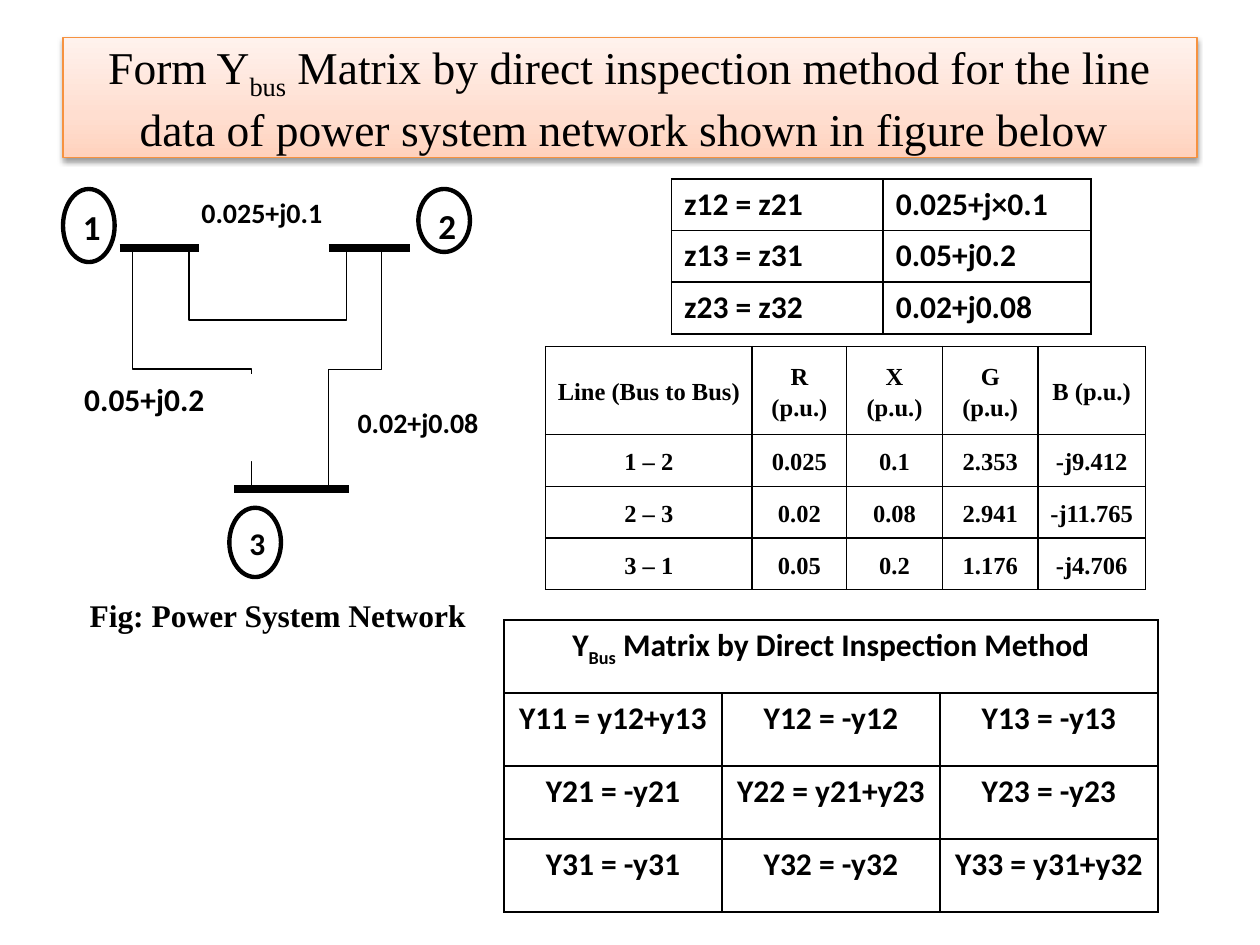
from copy import deepcopy

from lxml import etree
from pptx import Presentation
from pptx.dml.color import RGBColor
from pptx.enum.shapes import MSO_CONNECTOR as LINE, MSO_SHAPE as SHAPE
from pptx.enum.text import MSO_ANCHOR as ANCHOR, PP_ALIGN as ALIGN
from pptx.oxml import parse_xml
from pptx.oxml.ns import nsdecls, qn
from pptx.util import Inches, Pt

COLORS = {"ink": "000000", "paper": "FFFFFF", "title_line": "F69240"}
TITLE_STOPS = [(0, "FFD2BD"), (0.35, "FFDED0"), (1, "FFF2ED")]
SERIF = "Times New Roman"

IMPEDANCES = [
    ["z12 = z21", "0.025+j×0.1"],
    ["z13 = z31", "0.05+j0.2"],
    ["z23 = z32", "0.02+j0.08"],
]
LINE_DATA = [
    ["Line (Bus to Bus)", "R (p.u.)", "X (p.u.)", "G (p.u.)", "B (p.u.)"],
    ["1 – 2", "0.025", "0.1", "2.353", "-j9.412"],
    ["2 – 3", "0.02", "0.08", "2.941", "-j11.765"],
    ["3 – 1", "0.05", "0.2", "1.176", "-j4.706"],
]
Y_BUS = [
    ["Y~Bus~ Matrix by Direct Inspection Method", "", ""],
    ["Y11 = y12+y13", "Y12 = -y12", "Y13 = -y13"],
    ["Y21 = -y21", "Y22 = y21+y23", "Y23 = -y23"],
    ["Y31 = -y31", "Y32 = -y32", "Y33 = y31+y32"],
]


def color(name):
    return RGBColor.from_string(COLORS[name])


def write(tf, text, size=18, font="Calibri", bold=True, align=ALIGN.LEFT,
          after=None, spacing=None):
    """Fill a text frame; text between tildes becomes subscript."""
    tf.word_wrap = True
    p = tf.paragraphs[0]
    p.alignment = align
    if after is not None:
        p.space_after = Pt(after)
    if spacing is not None:
        p.line_spacing = spacing
    for i, part in enumerate(text.split("~")):
        r = p.add_run()
        r.text = part
        r.font.size, r.font.name, r.font.bold = Pt(size), font, bold
        r.font.color.rgb = color("ink")
        if i % 2:
            r._r.get_or_add_rPr().set("baseline", "-25000")


def add_box(s, kind, box, text, line=None, **fmt):
    sp = s.shapes.add_shape(kind, *map(Inches, box))
    sp.shadow.inherit = False
    sp.fill.solid()
    sp.fill.fore_color.rgb = color("paper")
    if line:
        sp.line.color.rgb = color("ink")
        sp.line.width = Pt(line)
    else:
        sp.line.fill.background()
    sp.text_frame.vertical_anchor = ANCHOR.TOP
    write(sp.text_frame, text, after=10, **fmt)


def add_title(s, text):
    sp = s.shapes.add_shape(SHAPE.RECTANGLE, *map(Inches, (0.5, 0.3, 9, 0.95)))
    sp.line.color.rgb = color("title_line")
    sp.line.width = Pt(0.75)
    sp.fill.gradient()
    sp.fill.gradient_angle = 90
    stops = sp._element.spPr.find(qn("a:gradFill")).find(qn("a:gsLst"))
    stops.append(deepcopy(stops[0]))
    for stop, (position, rgb) in zip(sp.fill.gradient_stops, TITLE_STOPS):
        stop.position = position
        stop.color.rgb = RGBColor.from_string(rgb)
    sp._element.spPr.append(parse_xml(
        f'<a:effectLst {nsdecls("a")}><a:outerShdw blurRad="{Pt(3.1)}" '
        f'dist="{Pt(1.6)}" dir="5400000" rotWithShape="0"><a:srgbClr val="{COLORS["ink"]}">'
        '<a:alpha val="38000"/></a:srgbClr></a:outerShdw></a:effectLst>'))
    sp.text_frame.vertical_anchor = ANCHOR.MIDDLE
    write(sp.text_frame, text, size=26, font=SERIF, bold=False, align=ALIGN.CENTER)


def add_line(s, kind, x1, y1, x2, y2, width):
    c = s.shapes.add_connector(kind, *map(Inches, (x1, y1, x2, y2)))
    c.line.color.rgb = color("ink")
    c.line.width = Pt(width)
    etree.SubElement(c._element.spPr, qn("a:effectLst"))
    return c


def add_elbow(s, x, y, w, h, bend, turn=0, flip=None):
    """Bent line in its unrotated frame, with the bend as a share of its width."""
    spPr = add_line(s, LINE.ELBOW, x, y, x + w, y + h, 0.75)._element.spPr
    xfrm = spPr.find(qn("a:xfrm"))
    xfrm.set("rot", str(turn * 60000))
    if flip:
        xfrm.set(flip, "1")
    guides = spPr.find(qn("a:prstGeom")).find(qn("a:avLst"))
    etree.SubElement(guides, qn("a:gd"), name="adj1", fmla=f"val {round(bend * 100000)}")


def border_cell(cell):
    tcPr = cell._tc.get_or_add_tcPr()
    for side in "LRTB":
        tcPr.append(parse_xml(
            f'<a:ln{side} {nsdecls("a")} w="{Pt(1)}"><a:solidFill>'
            f'<a:srgbClr val="{COLORS["ink"]}"/></a:solidFill></a:ln{side}>'))


def add_table(s, x, y, widths, heights, rows, compact=False, merge_top=False, **fmt):
    frame = s.shapes.add_table(len(rows), len(widths), Inches(x), Inches(y),
                               Inches(sum(widths)), Inches(sum(heights)))
    table = frame.table
    table.first_row = table.horz_banding = False
    for column, width in zip(table.columns, widths):
        column.width = Inches(width)
    for row, height, texts in zip(table.rows, heights, rows):
        row.height = Inches(height)
        for cell, text in zip(row.cells, texts):
            border_cell(cell)
            cell.fill.background()
            if compact:
                cell.vertical_anchor = ANCHOR.MIDDLE
                cell.margin_left = cell.margin_right = Inches(0.07)
                cell.margin_top = cell.margin_bottom = 0
            if text:
                write(cell.text_frame, text, **fmt)
    if merge_top:
        table.cell(0, 0).merge(table.cell(0, len(widths) - 1))


def add_network(s):
    for x1, x2, y in [(0.95, 1.58, 1.97), (2.61, 3.25, 1.97), (1.86, 2.77, 3.88)]:
        add_line(s, LINE.STRAIGHT, x1, y, x2, y, 4.5)
    add_elbow(s, 0.57, 2.46, 1.91, 0.94, 0.5, turn=270, flip="flipH")
    add_elbow(s, 1.86, 2.72, 1.91, 0.42, 0.5, turn=90)
    add_elbow(s, 1.5, 1.97, 0.49, 0.57, 0)
    add_elbow(s, 1.86, 1.97, 0.91, 0.57, 0.02, turn=180, flip="flipV")
    for bus, box, size in [("1", (0.5, 1.5, 0.41, 0.58), 20),
                           ("2", (3.32, 1.5, 0.41, 0.5), 20),
                           ("3", (1.82, 4.03, 0.41, 0.55), 18)]:
        add_box(s, SHAPE.OVAL, box, bus, line=2.5, size=size)
    for label, box, size in [("0.025+j0.1", (1.5, 1.5, 1.25, 0.42), 16),
                             ("0.05+j0.2", (0.57, 2.97, 1.43, 0.69), 18),
                             ("0.02+j0.08", (2.74, 3.17, 1.17, 0.5), 16)]:
        add_box(s, SHAPE.RECTANGLE, box, label, size=size)


def main():
    prs = Presentation()
    prs.slide_width, prs.slide_height = Inches(10), Inches(7.5)
    s = prs.slides.add_slide(prs.slide_layouts[6])
    add_title(s, "Form Y~bus~ Matrix by direct inspection method for the line "
                 "data of power system network shown in figure below ")
    add_network(s)
    add_table(s, 4, 4.92, [1.73] * 3, [0.58] * 4, Y_BUS,
              merge_top=True, align=ALIGN.CENTER)
    add_table(s, 5.33, 1.42, [1.68, 1.65], [0.41] * 3, IMPEDANCES)
    caption = s.shapes.add_textbox(*map(Inches, (0.58, 4.68, 3.25, 0.4)))
    write(caption.text_frame, "Fig: Power System Network", font=SERIF, align=ALIGN.CENTER)
    add_table(s, 4.33, 2.75, [1.64, 0.75, 0.76, 0.76, 0.85], [0.7] + [0.41] * 3,
              LINE_DATA, compact=True, size=14, font=SERIF, align=ALIGN.CENTER,
              spacing=1.15)
    prs.save("out.pptx")


if __name__ == "__main__":
    main()
